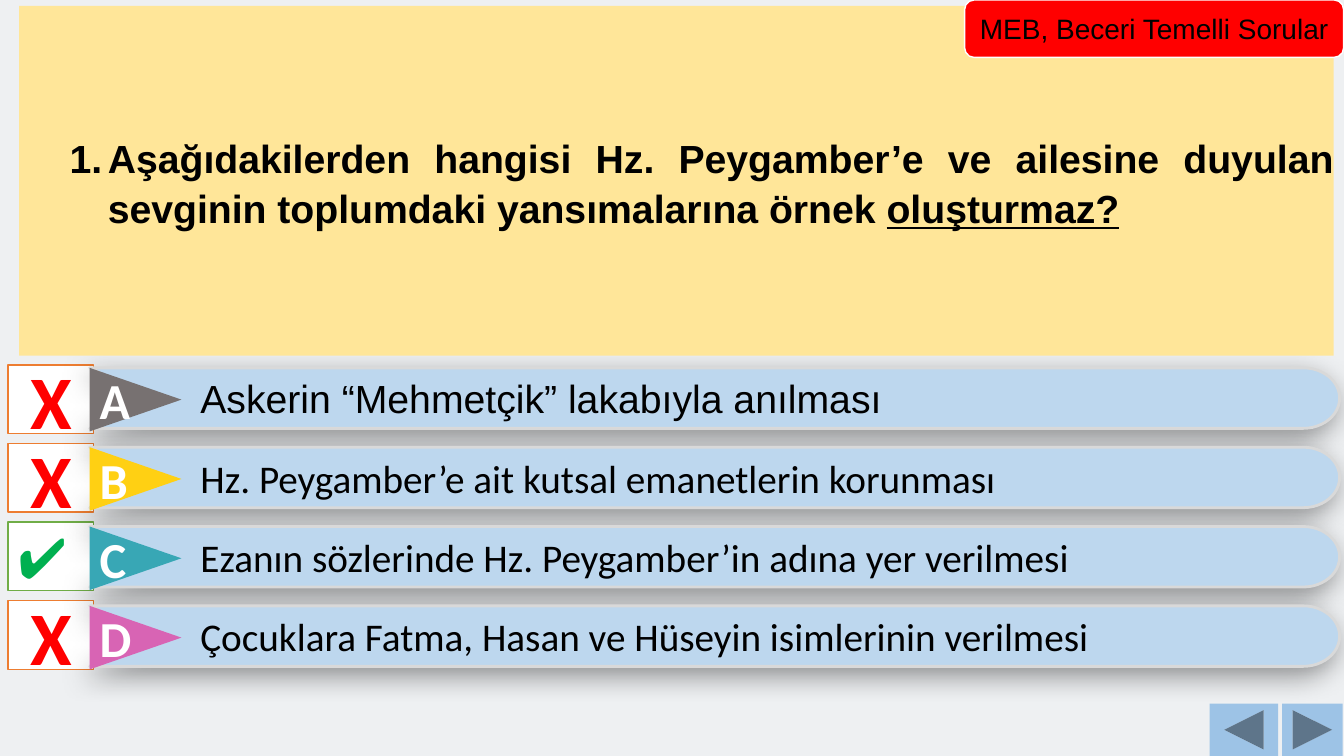
from math import cos, pi, sin

from lxml.etree import SubElement as Sub
from pptx import Presentation
from pptx.dml.color import RGBColor
from pptx.enum.shapes import MSO_SHAPE as Kind
from pptx.enum.text import MSO_ANCHOR as Anchor, PP_ALIGN as Align
from pptx.oxml.ns import qn
from pptx.util import Inches, Pt

# Grid: columns and rows of a tenth of an inch
CELL = Inches(0.1)
COLS, ROWS = 133.33, 75

HUES = {
    "back": "EEF0F2", "ask": "FFE699", "bar": "BDD7EE", "edge": "D9D9D9",
    "nav": "9DC3E6", "red": "FF0000", "white": "FFFFFF", "black": "000000",
    "wrong": "ED7D31", "right": "70AD47", "tick": "00B050",
    "A": "777171", "B": "FFD013", "C": "38A7B5", "D": "D864B4",
}

# Letter, answer, font, whether it is the right choice
ITEMS = [
    ("A", "Askerin “Mehmetçik” lakabıyla anılması", "Arial", False),
    ("B", "Hz. Peygamber’e ait kutsal emanetlerin korunması", "Calibri", False),
    ("C", "Ezanın sözlerinde Hz. Peygamber’in adına yer verilmesi", "Calibri", True),
    ("D", "Çocuklara Fatma, Hasan ve Hüseyin isimlerinin verilmesi", "Calibri", False),
]


def grid(num):
    return round(num * CELL)


def hue(name):
    return RGBColor.from_string(HUES[name])


def paint(shape, fill, line=None, width=1):
    shape.fill.solid()
    shape.fill.fore_color.rgb = hue(fill)
    if line:
        shape.line.color.rgb = hue(line)
        shape.line.width = Pt(width)
    else:
        shape.line.fill.background()
    shape.shadow.inherit = False


def block(slide, kind, area, fill, line=None):
    shape = slide.shapes.add_shape(kind, *map(grid, area))
    paint(shape, fill, line)
    return shape


def write(shape, runs, align=Align.CENTER, flush=False):
    """Add runs of (text, size, font, hue, bold, underline)."""
    frame = shape.text_frame
    frame.word_wrap = True
    frame.vertical_anchor = Anchor.MIDDLE
    if flush:
        frame.margin_left = frame.margin_right = 0
        frame.margin_top = frame.margin_bottom = 0
    para = frame.paragraphs[0]
    para.alignment = align
    for text, size, face, color, bold, under in runs:
        run = para.add_run()
        run.text = text
        font = run.font
        font.size, font.name = Pt(size), face
        font.bold, font.underline = bold, under
        font.color.rgb = hue(color)
    return para


def indent(para, left, first=0):
    props = para._p.get_or_add_pPr()
    props.set("marL", str(grid(left)))
    props.set("indent", str(grid(first)))
    return props


def shade(shape):
    """Soft shadow towards the lower left."""
    effects = shape._element.spPr.find(qn("a:effectLst"))
    outer = Sub(effects, qn("a:outerShdw"), blurRad=str(Pt(20)), dist=str(Pt(7)),
                dir=str(135 * 60000), algn="tr", rotWithShape="0")
    tone = Sub(outer, qn("a:srgbClr"), val=HUES["black"])
    Sub(tone, qn("a:alpha"), val="40000")


def mark(slide, top, good):
    box = block(slide, Kind.RECTANGLE, (0.8, top, 8.5, 6.8), "white",
                "right" if good else "wrong")
    if good:
        write(box, [("✔", 40, "Calibri", "tick", False, False)], Align.LEFT)
    else:
        write(box, [("X", 54, "Calibri", "red", True, False)])


def bar(slide, top, text, face):
    """Bar with a notch on the left and a round right end."""
    left, wide, high, bend, notch = 8.9, 124, 6, 3.6, 6.2
    mid, turn = top + high / 2, left + wide - bend
    steps = 24
    arc = [(turn + bend * sin(pi * i / steps), mid - high / 2 * cos(pi * i / steps))
           for i in range(steps + 1)]
    spots = arc + [(left, top + high), (left + notch, mid)]
    pen = slide.shapes.build_freeform(grid(left), grid(top))
    pen.add_line_segments([(grid(x), grid(y)) for x, y in spots], close=True)
    shape = pen.convert_to_shape()
    paint(shape, "bar", "edge", 2)
    shade(shape)
    para = write(shape, [(text, 28, face, "black", False, False)], Align.LEFT)
    indent(para, 10)


def flag(slide, top, letter):
    tip = block(slide, Kind.ISOSCELES_TRIANGLE, (10.3, top - 1.4, 6.3, 9.1), letter)
    tip.rotation = 90
    write(tip, [(letter, 36, "Calibri", "white", True, False)])
    tip.text_frame._txBody.bodyPr.set("vert", "vert270")


def ask(slide):
    box = block(slide, Kind.RECTANGLE, (1.9, 0.6, 130.4, 34.7), "ask")
    para = write(box, [
        ("Aşağıdakilerden hangisi Hz. Peygamber’e ve ailesine duyulan sevginin "
         "toplumdaki yansımalarına örnek ", 28, "Arial", "black", True, False),
        ("oluşturmaz?", 28, "Arial", "black", True, True),
    ], Align.JUSTIFY, flush=True)
    para.line_spacing = 1.07
    props = indent(para, 8.8, -3.8)
    Sub(props, qn("a:buFont"), typeface="+mj-lt")
    Sub(props, qn("a:buAutoNum"), type="arabicPeriod")


def main():
    deck = Presentation()
    deck.slide_width, deck.slide_height = grid(COLS), grid(ROWS)
    slide = deck.slides.add_slide(deck.slide_layouts[6])
    slide.background.fill.solid()
    slide.background.fill.fore_color.rgb = hue("back")

    # Marks, then answers
    for row, item in enumerate(ITEMS):
        mark(slide, 36.2 + 7.8 * row, item[3])
    for row, (letter, text, face, _) in enumerate(ITEMS):
        top = 36.5 + 7.87 * row
        bar(slide, top, text, face)
        flag(slide, top, letter)

    # Question
    ask(slide)

    # Page buttons
    block(slide, Kind.ACTION_BUTTON_BACK_OR_PREVIOUS, (120, 69.8, 6.8, 5.2), "nav")
    block(slide, Kind.ACTION_BUTTON_FORWARD_OR_NEXT, (127.2, 69.8, 6, 5.2), "nav")

    # Source label
    label = block(slide, Kind.ROUNDED_RECTANGLE, (95.7, 0, 37.6, 5.7), "red", "white")
    write(label, [("MEB, Beceri Temelli Sorular", 20, "Arial", "black", False, False)],
          flush=True)

    deck.save("out.pptx")


if __name__ == "__main__":
    main()
